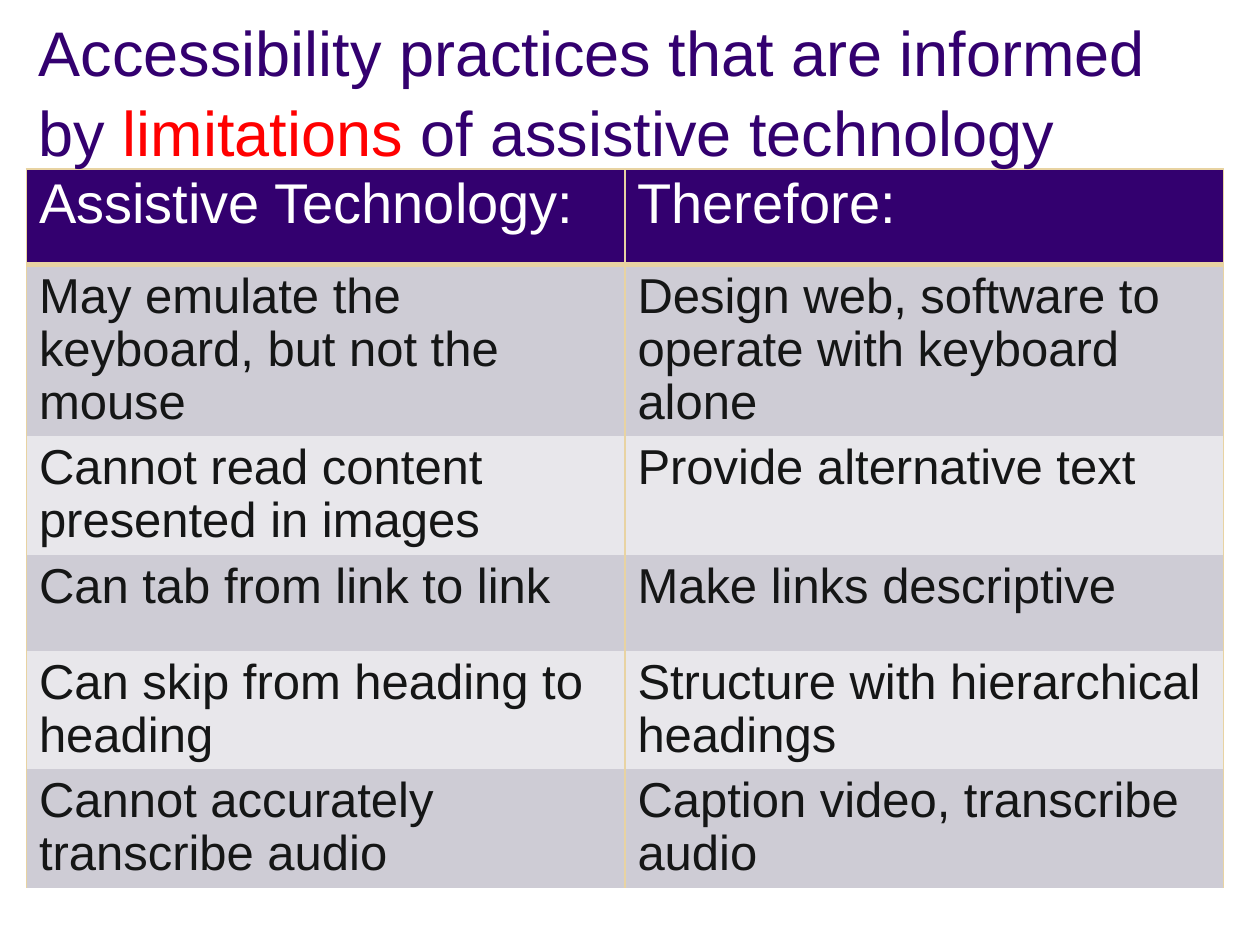
from dataclasses import dataclass

from lxml.etree import SubElement
from pptx import Presentation
from pptx.dml.color import RGBColor as RGB
from pptx.enum.text import MSO_AUTO_SIZE as AutoSize
from pptx.oxml.ns import qn
from pptx.util import Inches, Pt


@dataclass(frozen=True)
class Theme:
    font: str = "Arial"
    title_size: int = 36
    header_size: int = 32
    body_size: int = 28
    title_spacing: float = 1.05
    body_spacing: float = 0.97
    purple: str = "33006F"
    red: str = "FF0000"
    white: str = "FFFFFF"
    ink: str = "151616"
    gold: str = "E8D3A2"
    bands: tuple = ("CECCD5", "E8E7EB")


TITLE = [
    ("Accessibility practices that are informed by ", Theme.purple),
    ("limitations", Theme.red),
    (" of assistive technology", Theme.purple),
]
ROWS = [
    ("Assistive Technology:", "Therefore:"),
    ("May emulate the keyboard, but not the mouse",
     "Design web, software to operate with keyboard alone"),
    ("Cannot read content presented in images", "Provide alternative text"),
    ("Can tab from link to link", "Make links descriptive"),
    ("Can skip from heading to heading", "Structure with hierarchical headings"),
    ("Cannot accurately transcribe audio", "Caption video, transcribe audio"),
]


def add_text(p, text, *, size, color, font):
    r = p.add_run()
    r.text = text
    r.font.name, r.font.size, r.font.bold = font, Pt(size), False
    r.font.color.rgb = RGB.from_string(color)


def set_borders(cell, color, **widths):
    """Draw the L, R, T and B borders in points; a width of 0 hides one."""
    tcPr = cell._tc.get_or_add_tcPr()
    for side in "LRTB":
        width = widths[side]
        ln = SubElement(tcPr, qn(f"a:ln{side}"), w=str(Pt(width)))
        if width:
            fill = SubElement(ln, qn("a:solidFill"))
            SubElement(fill, qn("a:srgbClr"), val=color)
        else:
            SubElement(ln, qn("a:noFill"))


class SlideBuilder:
    def __init__(self, s, theme):
        self.s, self.theme = s, theme

    def title(self, parts, left, top, width, height):
        t = self.theme
        sp = self.s.shapes.add_textbox(left, top, width, height)
        tf = sp.text_frame
        tf.word_wrap = True
        tf.auto_size = AutoSize.SHAPE_TO_FIT_TEXT
        p = tf.paragraphs[0]
        p.line_spacing = t.title_spacing
        for text, color in parts:
            add_text(p, text, size=t.title_size, color=color, font=t.font)

    def table(self, rows, left, top, width, row_height):
        shape = self.s.shapes.add_table(
            len(rows), len(rows[0]), left, top, width, row_height * len(rows))
        table = shape.table
        table.horz_banding = False
        for i, row in enumerate(rows):
            for j, text in enumerate(row):
                self.cell(table.cell(i, j), text, i)

    def cell(self, cell, text, row):
        t = self.theme
        header = row == 0
        set_borders(cell, t.gold, L=1, R=1, T={0: 1, 1: 3}.get(row, 0),
                    B=3 if header else 0)
        fill = t.purple if header else t.bands[(row - 1) % 2]
        cell.fill.solid()
        cell.fill.fore_color.rgb = RGB.from_string(fill)
        p = cell.text_frame.paragraphs[0]
        p.line_spacing = t.body_spacing
        add_text(p, text, font=t.font,
                 size=t.header_size if header else t.body_size,
                 color=t.white if header else t.ink)


def main():
    prs = Presentation()
    prs.slide_width, prs.slide_height = Inches(10), Inches(7.5)
    s = prs.slides.add_slide(prs.slide_layouts[6])
    builder = SlideBuilder(s, Theme())
    left = Inches(0.21)
    builder.table(ROWS, left, Inches(1.34), Inches(9.5), Inches(0.76))
    builder.title(TITLE, left, Inches(0.03), Inches(9.29), Inches(1.31))
    prs.save("out.pptx")


if __name__ == "__main__":
    main()
